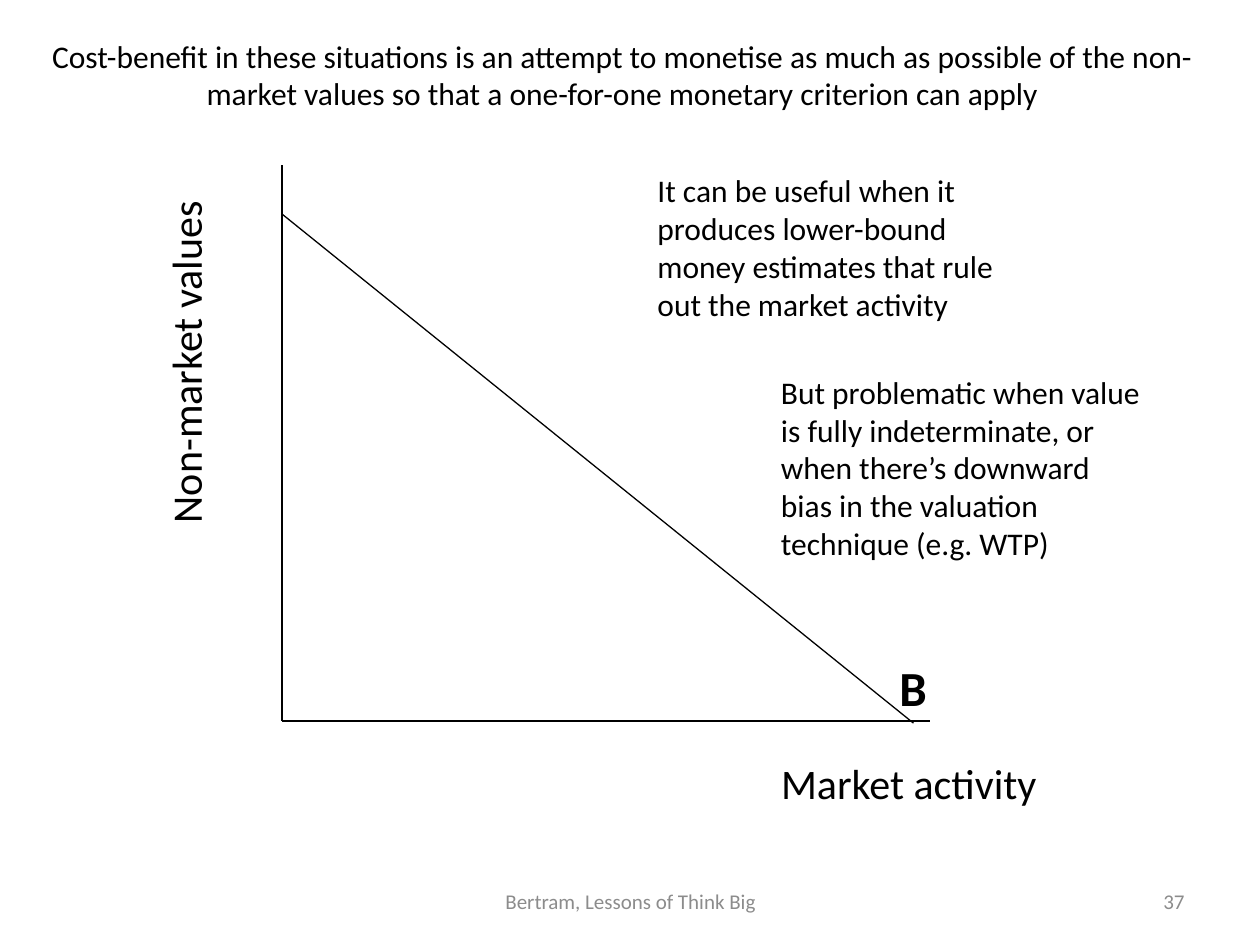
from dataclasses import dataclass

from lxml.etree import SubElement
from pptx import Presentation
from pptx.dml.color import RGBColor
from pptx.enum.shapes import MSO_CONNECTOR
from pptx.enum.text import MSO_ANCHOR as Anchor, PP_ALIGN as Align
from pptx.oxml.ns import qn
from pptx.util import Inches, Pt


@dataclass(frozen=True)
class Theme:
    font: str = "Calibri"
    ink: RGBColor = RGBColor(0, 0, 0)
    muted: RGBColor = RGBColor(0x8C, 0x8C, 0x8C)
    footer: int = 12
    body: int = 18
    axis: int = 24
    point: int = 28
    axis_line: float = 1
    trade_off_line: float = 0.75


theme = Theme()
presentation = Presentation()
presentation.slide_width, presentation.slide_height = Inches(10), Inches(7.5)
# All positions below are percentages of the slide's width and height.
column = presentation.slide_width / 100
row = presentation.slide_height / 100
slide = presentation.slides.add_slide(presentation.slide_layouts[5])


def set_text(shape, box, text, size, color=theme.ink, align=Align.LEFT,
             anchor=Anchor.TOP, wrap=True):
    """Place a text shape and give it one formatted paragraph."""
    left, top, width, height = box
    shape.left, shape.width = round(left * column), round(width * column)
    shape.top, shape.height = round(top * row), round(height * row)
    frame = shape.text_frame
    frame.text = text
    frame.word_wrap = wrap
    frame.vertical_anchor = anchor
    paragraph = frame.paragraphs[0]
    paragraph.alignment = align
    paragraph.font.name = theme.font
    paragraph.font.size = Pt(size)
    paragraph.font.color.rgb = color
    return shape


def add_text(*args, **options):
    return set_text(slide.shapes.add_textbox(0, 0, 0, 0), *args, **options)


set_text(
    slide.shapes.title, (0, 3.2, 98.8, 9.47),
    "Cost-benefit in these situations is an attempt to monetise as much as "
    "possible of the non-market values so that a one-for-one monetary "
    "criterion can apply",
    theme.body, align=Align.CENTER)

# Axes and the trade-off line
axis_x, axis_y = 22.4, 76.27
for start, end, weight in (
    ((axis_x, 17.47), (axis_x, axis_y), theme.axis_line),
    ((73.8, axis_y), (axis_x, axis_y), theme.axis_line),
    ((72.5, 76.53), (axis_x, 22.67), theme.trade_off_line),
):
    line = slide.shapes.add_connector(
        MSO_CONNECTOR.STRAIGHT,
        round(start[0] * column), round(start[1] * row),
        round(end[0] * column), round(end[1] * row))
    line.line.color.rgb = theme.ink
    line.line.width = Pt(weight)
    SubElement(line._element.spPr, qn("a:effectLst"))

# Axis and point labels
vertical_label = add_text((0.8, 34.8, 27.8, 6.67), "Non-market values",
                          theme.axis, wrap=False)
vertical_label.rotation = 270
add_text((61, 79.47, 22.5, 6.67), "Market activity", theme.axis, wrap=False)
point_label = add_text((70.4, 68.93, 4.2, 7.6), "B", theme.point, wrap=False)
point_label.text_frame.paragraphs[0].font.bold = True

# Comments beside the chart
add_text((51.2, 17.47, 32.3, 17.47),
         "It can be useful when it produces lower-bound money estimates that "
         "rule out the market activity", theme.body)
add_text((61, 38.8, 30.7, 21.6),
         "But problematic when value is fully indeterminate, or when there’s "
         "downward bias in the valuation technique (e.g. WTP)", theme.body)

# Footer
for box, text, align in (
    ((34.2, 92.67, 31.7, 5.33), "Bertram, Lessons of Think Big", Align.CENTER),
    ((71.7, 92.67, 23.3, 5.33), "37", Align.RIGHT),
):
    add_text(box, text, theme.footer, theme.muted, align, Anchor.MIDDLE)

presentation.save("out.pptx")
